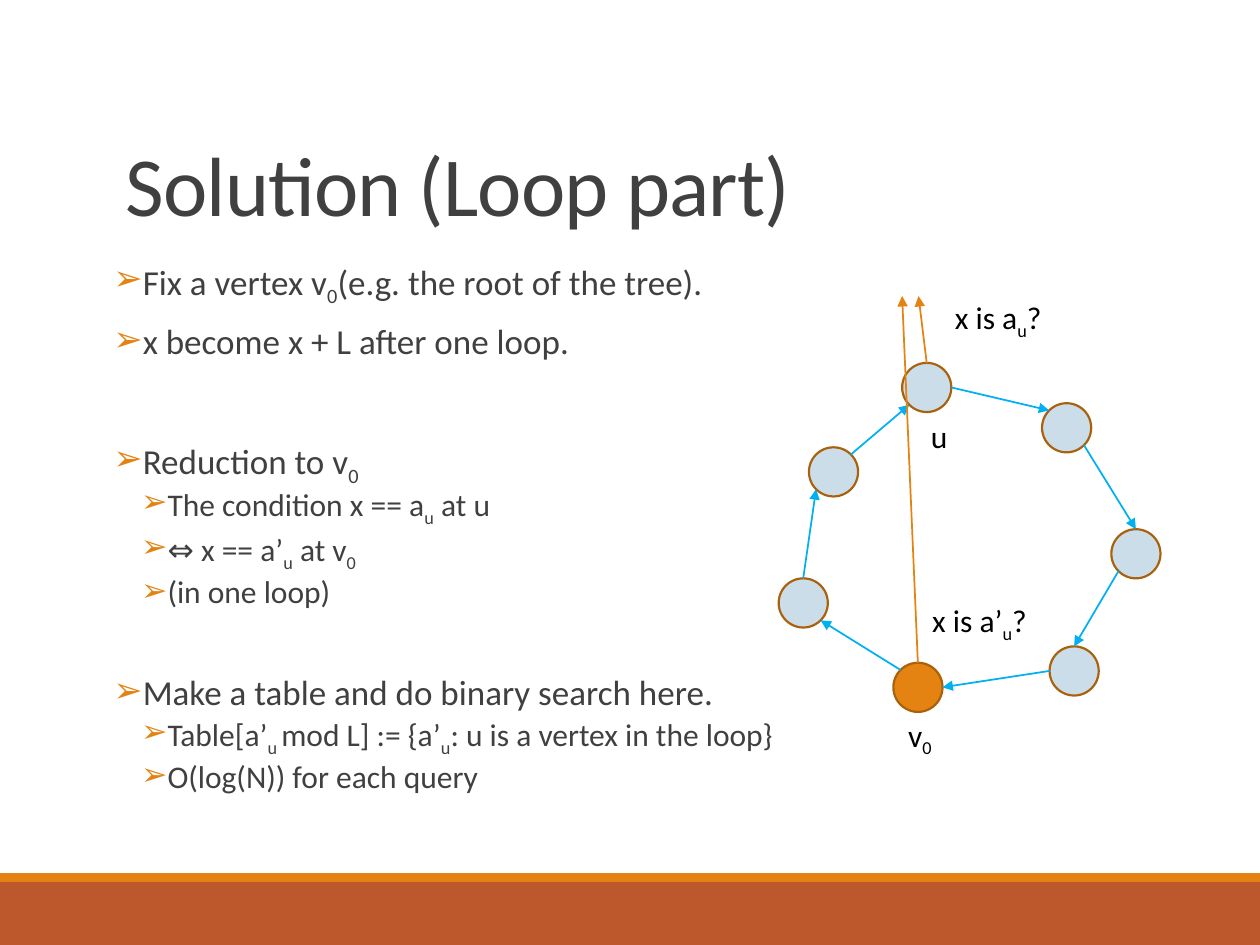
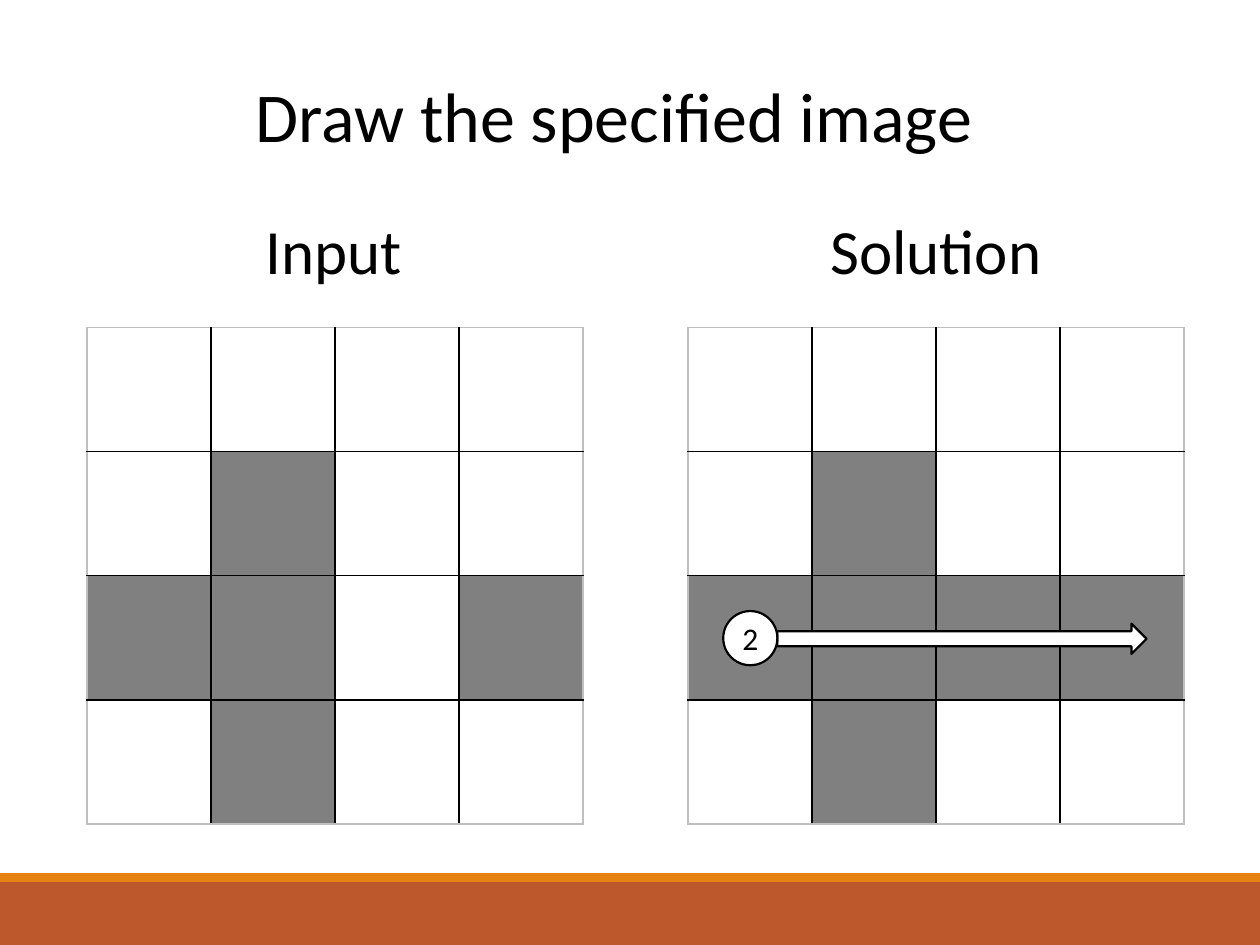
from math import cos, pi, sin

from lxml import etree
from pptx import Presentation
from pptx.dml.color import RGBColor
from pptx.enum import shapes, text
from pptx.oxml import ns
from pptx.util import Inches, Pt

# Shared look
FONT = "Calibri"
RUST = RGBColor(0xBD, 0x58, 0x2C)
ORANGE = RGBColor(0xE4, 0x83, 0x12)
BROWN = RGBColor(0xA9, 0x61, 0x0D)
PALE = RGBColor(0xCC, 0xDD, 0xEA)
SKY = RGBColor(0x00, 0xB0, 0xF0)
DARK = RGBColor(0x40, 0x40, 0x40)
GREY = RGBColor(0x80, 0x80, 0x80)
LIGHT = RGBColor(0xBF, 0xBF, 0xBF)
BLACK = RGBColor(0, 0, 0)
WHITE = RGBColor(0xFF, 0xFF, 0xFF)
KIND = shapes.MSO_SHAPE

# Loop vertices in order: left, top, entry port, exit port.
# Ports run counterclockwise from the top in steps of 45 degrees.
SIZE = 0.39
LOOP = [
    (7.16, 2.88, 3, 6),
    (8.27, 3.20, 1, 5),
    (8.82, 4.20, 0, 3),
    (8.33, 5.13, 0, 2),
    (7.09, 5.26, 6, 1),
    (6.18, 4.59, 5, 0),
    (6.42, 3.55, 3, 7),
]
TOP, ROOT = LOOP[0], LOOP[4]

# Level, space before, words; parts between bars are subscripts
POINTS = [
    (0, 12, "Fix a vertex v|0|(e.g. the root of the tree)."),
    (0, 12, "x become x + L after one loop."),
    (0, 45.5, "Reduction to v|0|"),
    (1, 2, "The condition x == a|u| at u"),
    (1, 2, "⇔ x == a’|u| at v|0|"),
    (1, 2, "(in one loop)"),
    (0, 35.5, "Make a table and do binary search here."),
    (1, 2, "Table[a’|u |mod L] := {a’|u|: u is a vertex in the loop}"),
    (1, 2, "O(log(N)) for each query"),
]

# Shaded cells
INPUT = ["....", ".#..", "##.#", ".#.."]
SOLVED = ["....", ".#..", "####", ".#.."]


def add_sub(parent, tag, **attrs):
    return etree.SubElement(parent, ns.qn(tag), attrs)


def write(para, words, size, color=BLACK):
    for i, part in enumerate(words.split("|")):
        if not part:
            continue
        run = para.add_run()
        run.text = part
        run.font.name, run.font.size = FONT, Pt(size)
        run.font.color.rgb = color
        if i % 2:
            run.font._element.set("baseline", "-25000")


def add_text(slide, box, words, size, color=BLACK, wrap=True):
    frame = slide.shapes.add_textbox(*map(Inches, box)).text_frame
    frame.word_wrap = wrap
    write(frame.paragraphs[0], words, size, color)
    return frame


def add_form(slide, kind, box, fill, line=None):
    form = slide.shapes.add_shape(kind, *map(Inches, box))
    form.shadow.inherit = False
    form.fill.solid()
    form.fill.fore_color.rgb = fill
    if line is None:
        form.line.fill.background()
    else:
        form.line.color.rgb = line
        form.line.width = Pt(1.25)
    return form


def add_arrow(slide, start, end, color):
    link = slide.shapes.add_connector(
        shapes.MSO_CONNECTOR.STRAIGHT, *map(Inches, start + end))
    link.line.color.rgb = color
    link.line.width = Pt(1)
    add_sub(link.line._get_or_add_ln(), "a:tailEnd", type="triangle")
    add_sub(link._element.spPr, "a:effectLst")


def add_slide(deck):
    slide = deck.slides.add_slide(deck.slide_layouts[6])
    add_form(slide, KIND.RECTANGLE, (0, 7, 10, 0.5), RUST)
    add_form(slide, KIND.RECTANGLE, (0, 6.93, 10, 0.07), ORANGE)
    return slide


def add_title(slide, words):
    frame = add_text(slide, (0.9, 0.31, 8.25, 1.59), words, 48, DARK)
    frame.vertical_anchor = text.MSO_ANCHOR.BOTTOM
    para = frame.paragraphs[0]
    para.line_spacing = 0.85
    para.runs[0].font._element.set("spc", "-50")


def add_points(slide, points):
    frame = slide.shapes.add_textbox(
        *map(Inches, (0.9, 2.05, 8.25, 4.4))).text_frame
    frame.word_wrap = True
    frame.margin_left = frame.margin_right = 0
    for i, (level, before, words) in enumerate(points):
        para = frame.add_paragraph() if i else frame.paragraphs[0]
        para.level = level
        para.line_spacing = 0.8
        para.space_before = Pt(before)
        para.space_after = Pt((2, 4)[level])
        props = para._p.get_or_add_pPr()
        props.set("marL", str(Inches((0.1, 0.42)[level])))
        props.set("indent", str(Inches((-0.1, -0.2)[level])))
        tint = add_sub(props, "a:buClr")
        add_sub(tint, "a:srgbClr", val=str(ORANGE))
        add_sub(props, "a:buFont", typeface=FONT)
        add_sub(props, "a:buChar", char="➢")
        write(para, words, (20, 18)[level], DARK)


def port(node, step):
    angle, half = step * pi / 4, SIZE / 2
    return (node[0] + half - half * sin(angle),
            node[1] + half - half * cos(angle))


def add_loop(slide):
    for node in LOOP:
        fill = ORANGE if node is ROOT else PALE
        add_form(slide, KIND.OVAL, node[:2] + (SIZE, SIZE), fill, BROWN)
    for node, after in zip(LOOP, LOOP[1:] + LOOP[:1]):
        add_arrow(slide, port(node, node[3]), port(after, after[2]), SKY)
    # Queries leave the loop upwards
    add_arrow(slide, port(TOP, 0), (7.29, 2.35), ORANGE)
    add_arrow(slide, port(ROOT, 0), (7.16, 2.35), ORANGE)
    for left, top, width, words in [
        (7.11, 5.63, 0.5, "v|0|"),
        (7.48, 2.32, 0.92, "x is a|u|?"),
        (7.29, 3.26, 0.53, "u"),
        (7.3, 4.72, 1.17, "x is a’|u|?"),
    ]:
        add_text(slide, (left, top, width, 0.4), words, 18)


def add_edge(cell, side, color):
    edge = add_sub(cell._tc.get_or_add_tcPr(), "a:ln" + side, w=str(Pt(1)))
    add_sub(add_sub(edge, "a:solidFill"), "a:srgbClr", val=str(color))


def add_grid(slide, left, marks):
    count = len(marks)
    table = slide.shapes.add_table(
        count, count, *map(Inches, (left, 2.6, 3.94, 3.94))).table
    table.first_row = table.horz_banding = False
    last = count - 1
    for r, row in enumerate(marks):
        for c, mark in enumerate(row):
            cell = table.cell(r, c)
            outer = {"L": c == 0, "R": c == last, "T": r == 0, "B": r == last}
            for side, rim in outer.items():
                add_edge(cell, side, LIGHT if rim else BLACK)
            cell.fill.solid()
            cell.fill.fore_color.rgb = GREY if mark == "#" else WHITE


def add_stroke(slide):
    add_form(slide, KIND.RIGHT_ARROW, (6.17, 4.95, 2.93, 0.24), WHITE, BLACK)
    disc = add_form(slide, KIND.OVAL, (5.74, 4.85, 0.43, 0.43), WHITE, BLACK)
    frame = disc.text_frame
    frame.margin_left = frame.margin_right = 0
    frame.margin_top = frame.margin_bottom = 0
    frame.vertical_anchor = text.MSO_ANCHOR.MIDDLE
    frame.paragraphs[0].alignment = text.PP_ALIGN.CENTER
    write(frame.paragraphs[0], "2", 18)


def main():
    deck = Presentation()
    deck.slide_width, deck.slide_height = Inches(10), Inches(7.5)

    # Loop slide
    slide = add_slide(deck)
    add_title(slide, "Solution (Loop part)")
    add_points(slide, POINTS)
    add_loop(slide)

    # Drawing slide
    slide = add_slide(deck)
    add_text(slide, (1.93, 0.53, 5.95, 0.77), "Draw the specified image", 40,
             wrap=False)
    add_text(slide, (2.01, 1.63, 1.29, 0.71), "Input", 36, wrap=False)
    add_text(slide, (6.49, 1.63, 1.9, 0.71), "Solution", 36, wrap=False)
    add_grid(slide, 0.69, INPUT)
    add_grid(slide, 5.46, SOLVED)
    add_stroke(slide)

    deck.save("out.pptx")


if __name__ == "__main__":
    main()
